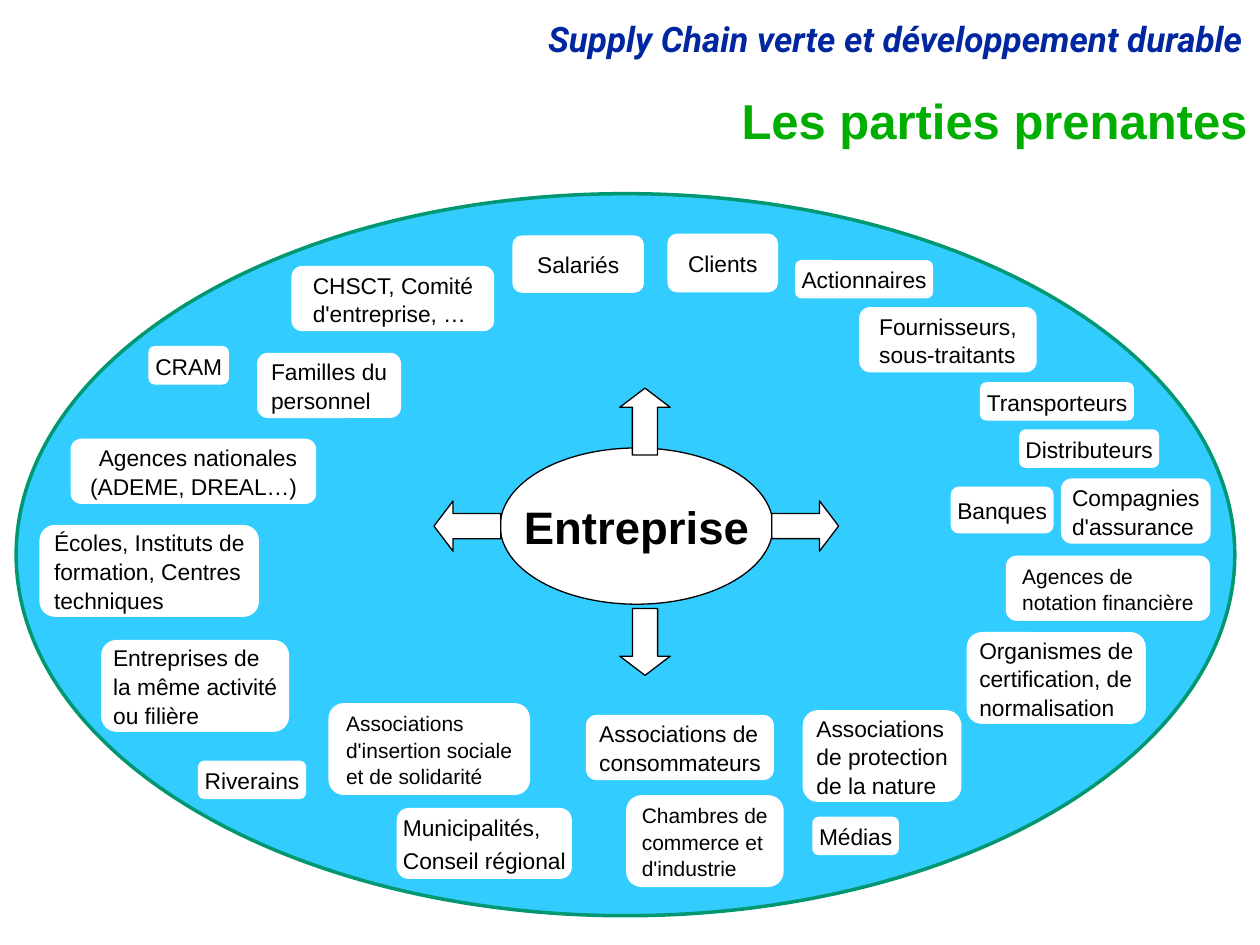
from pptx import Presentation
from pptx.dml.color import RGBColor
from pptx.enum.shapes import MSO_SHAPE as Shape
from pptx.enum.text import MSO_ANCHOR as Anchor, MSO_AUTO_SIZE as AutoSize, PP_ALIGN as Align
from pptx.util import Pt

COLORS = {
    "header": "00279F", "title": "00AE00", "field": "33CCFF",
    "rim": "009771", "white": "FFFFFF", "black": "000000",
}
HEADER = "Supply Chain verte et développement durable"
TITLE = "Les parties prenantes"
COMPANY = "Entreprise"

# Stakeholders: text, left, top, width, height; "\n" starts a paragraph, "\v" a line
WRAPPED = [
    ("Associations de consommateurs", 334.8, 408.5, 107.5, 37.3),
    ("Associations de protection de la nature", 458.7, 405.8, 90.7, 52.5),
    ("Salariés", 292.8, 134.5, 75.2, 32.8),
    ("Clients", 381.4, 133.5, 63.2, 33.6),
    ("Agences nationales (ADEME, DREAL…)", 40.3, 250.7, 140.4, 37.3),
    ("Écoles, Instituts de formation, Centres techniques", 22.6, 300, 125.4, 52.5),
    ("Entreprises de\vla même activité\vou filière", 57.8, 365.7, 107.4, 52.5),
    ("Fournisseurs, sous-traitants", 491, 175.5, 101.4, 37.3),
    ("CHSCT, Comité d'entreprise, …", 166.5, 152, 115.9, 37.3),
    ("Familles du personnel", 146.9, 201.6, 82.3, 37.3),
    ("Compagnies d'assurance", 606.3, 273.4, 85.5, 37.3),
    ("Organismes de certification, de normalisation", 552.4, 361.2, 102.4, 52.5),
]
SMALL_WRAPPED = [
    ("Associations d'insertion sociale et de solidarité", 187.7, 401.8, 115.2, 52.5),
    ("Chambres de commerce et d'industrie", 357.8, 454.4, 90, 52.5),
    ("Agences de notation financière", 574.8, 317.5, 116.8, 37.3),
]
UNWRAPPED = [
    ("Médias", 464.2, 466.7, 49.5, 21.9),
    ("Riverains", 113.1, 434.7, 61.9, 21.9),
    ("Municipalités,\nConseil régional", 226.7, 461.7, 100.1, 40.5),
    ("Banques", 543.3, 278.1, 58.8, 26.7),
    ("Actionnaires", 454.4, 148.6, 78.8, 21.9),
    ("Distributeurs", 582.4, 245.4, 80, 21.9),
    ("Transporteurs", 560, 218.4, 88, 21.9),
    ("CRAM", 84.8, 197.7, 46, 22.1),
]
RIGHT_ALIGNED = "Agences nationales (ADEME, DREAL…)"

# Arrows: centre x, centre y, rotation
ARROW_WIDTH, ARROW_HEIGHT = 28.8, 38.2
ARROWS = [(368.6, 240.9, 0), (460.1, 300.6, 90), (368.6, 366.8, 180), (267.1, 300.6, 270)]


def color(name):
    return RGBColor.from_string(COLORS[name])


def write_text(box, text, size=13, fill="black", font="Arial", bold=False, italic=False,
               align=Align.LEFT, anchor=Anchor.MIDDLE, wrap=True, line_spacing=1.0,
               inset_x=3.6, inset_y=3.6, centre_block=False):
    frame = box.text_frame
    frame.text = text
    frame.auto_size = AutoSize.NONE
    frame.word_wrap = wrap
    frame.vertical_anchor = anchor
    frame.margin_left = frame.margin_right = Pt(inset_x)
    frame.margin_top = frame.margin_bottom = Pt(inset_y)
    if centre_block:
        frame._txBody.bodyPr.set("anchorCtr", "1")
    for index, para in enumerate(frame.paragraphs):
        para.alignment = align
        para.line_spacing = line_spacing
        para.space_before = Pt(size * 0.2 if index else 0)
        for span in para.runs:
            span.font.name = font
            span.font.size = Pt(size)
            span.font.bold = bold
            span.font.italic = italic
            span.font.color.rgb = color(fill)


def add_shape(page, kind, left, top, width, height, fill="white", line=None, weight=0.75):
    shape = page.shapes.add_shape(kind, Pt(left), Pt(top), Pt(width), Pt(height))
    shape.shadow.inherit = False
    shape.fill.solid()
    shape.fill.fore_color.rgb = color(fill)
    if line:
        shape.line.color.rgb = color(line)
        shape.line.width = Pt(weight)
    else:
        shape.line.fill.background()
    return shape


def add_stakeholders(page, entries, **text_format):
    for text, *place in entries:
        box = add_shape(page, Shape.ROUNDED_RECTANGLE, *place)
        align = Align.RIGHT if text == RIGHT_ALIGNED else Align.LEFT
        write_text(box, text, align=align, line_spacing=1.05, centre_block=True, **text_format)


def main():
    deck = Presentation()
    deck.slide_width, deck.slide_height = Pt(720), Pt(540)
    page = deck.slides.add_slide(deck.slide_layouts[5])

    # Header and title
    header = page.shapes.add_textbox(Pt(135.4), Pt(9.4), Pt(581.8), Pt(28.8))
    write_text(header, HEADER, size=20, fill="header", font="Roboto", bold=True, italic=True,
               align=Align.RIGHT, anchor=Anchor.TOP, line_spacing=0.9, inset_x=7.2)
    title = page.shapes.title
    title.left, title.top, title.width, title.height = Pt(9.4), Pt(51.8), Pt(710.6), Pt(31)
    write_text(title, TITLE, size=28, fill="title", bold=True, align=Align.RIGHT,
               anchor=Anchor.TOP, line_spacing=0.9, inset_x=7.2)

    # Surrounding field and stakeholders
    add_shape(page, Shape.OVAL, 9.2, 110.7, 696.4, 412.6, fill="field", line="rim", weight=2)
    add_stakeholders(page, WRAPPED)
    add_stakeholders(page, SMALL_WRAPPED, size=12)
    add_stakeholders(page, UNWRAPPED, wrap=False)

    # Company in the centre, with its four arrows
    company = add_shape(page, Shape.OVAL, 285.8, 256, 156, 89.3, line="black")
    write_text(company, COMPANY, size=26, bold=True, wrap=False, inset_x=1.4,
               align=Align.CENTER)
    for centre_x, centre_y, rotation in ARROWS:
        arrow = add_shape(page, Shape.UP_ARROW, centre_x - ARROW_WIDTH / 2,
                          centre_y - ARROW_HEIGHT / 2, ARROW_WIDTH, ARROW_HEIGHT, line="black")
        arrow.adjustments[0], arrow.adjustments[1] = 0.5, 0.38
        arrow.rotation = rotation

    deck.save("out.pptx")


if __name__ == "__main__":
    main()
